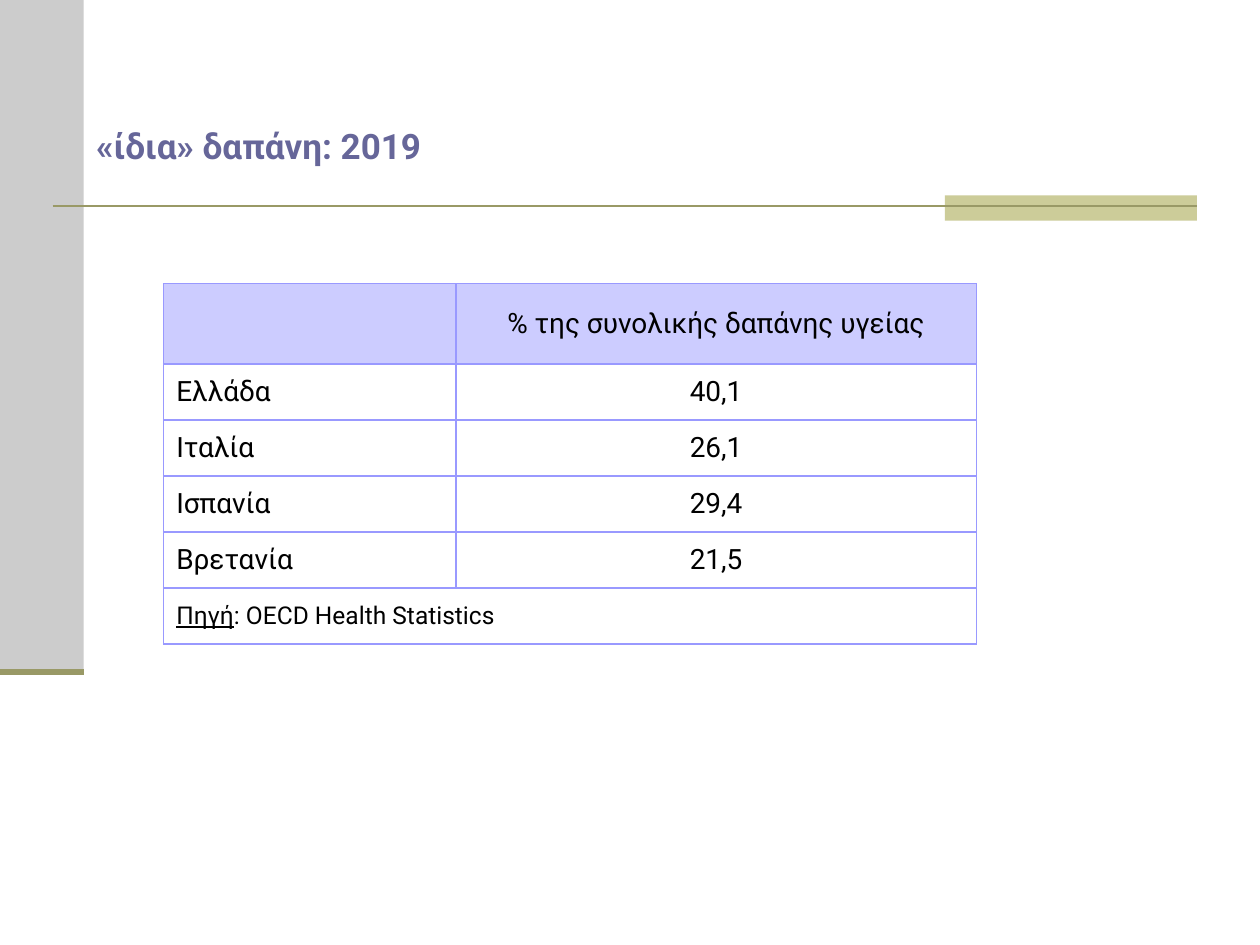
from lxml.etree import SubElement
from pptx import Presentation
from pptx.dml.color import RGBColor
from pptx.enum.shapes import MSO_CONNECTOR, MSO_SHAPE
from pptx.enum.text import MSO_ANCHOR, PP_ALIGN
from pptx.oxml.ns import qn
from pptx.util import Cm, Pt

FONT = "Roboto"
COLORS = {
    "side": "CCCCCC", "accent": "CCCC99", "rule": "999966", "title": "666699",
    "border": "9999FF", "header": "CCCCFF", "body": "FFFFFF", "text": "000000",
}
TITLE = "«ίδια» δαπάνη: 2019"
ROWS = [
    ("", "% της συνολικής δαπάνης υγείας"),
    ("Ελλάδα", "40,1"),
    ("Ιταλία", "26,1"),
    ("Ισπανία", "29,4"),
    ("Βρετανία", "21,5"),
]
SOURCE = [("Πηγή", True), (": OECD Health Statistics", False)]

COL_WIDTHS = [5.89, 10.49]
HEADER_HEIGHT, ROW_HEIGHT = 1.62, 1.13
SIDE_WIDTH, SIDE_HEIGHT = 1.69, 13.55
BARS = [
    ("side", 0, 0, SIDE_WIDTH, SIDE_HEIGHT),
    ("accent", 19.05, 3.94, 5.08, 0.51),
]
RULES = [
    (1.06, 4.15, 24.13, 1.5),
    (0, SIDE_HEIGHT, SIDE_WIDTH, 3.5),
]


def rgb(name):
    return RGBColor.from_string(COLORS[name])


def add_run(p, text, size, color="text", bold=False, underline=False):
    r = p.add_run()
    r.text = text
    r.font.name, r.font.size = FONT, Pt(size)
    r.font.bold, r.font.underline = bold, underline
    r.font.color.rgb = rgb(color)


def style_cell(cell, fill):
    """Border all four sides, then fill; the schema needs this order."""
    tcPr = cell._tc.get_or_add_tcPr()
    for side in ("a:lnL", "a:lnR", "a:lnT", "a:lnB"):
        ln = SubElement(tcPr, qn(side), w=str(Pt(1)))
        SubElement(SubElement(ln, qn("a:solidFill")), qn("a:srgbClr"), val=COLORS["border"])
    cell.fill.solid()
    cell.fill.fore_color.rgb = rgb(fill)
    cell.vertical_anchor = MSO_ANCHOR.MIDDLE


prs = Presentation()
prs.slide_width, prs.slide_height = Cm(25.4), Cm(19.05)
s = prs.slides.add_slide(prs.slide_layouts[6])

for color, *box in BARS:
    sp = s.shapes.add_shape(MSO_SHAPE.RECTANGLE, *map(Cm, box))
    sp.shadow.inherit = False
    sp.fill.solid()
    sp.fill.fore_color.rgb = rgb(color)
    sp.line.fill.background()

for left, y, right, width in RULES:
    line = s.shapes.add_connector(MSO_CONNECTOR.STRAIGHT, Cm(left), Cm(y), Cm(right), Cm(y))
    line.line.color.rgb = rgb("rule")
    line.line.width = Pt(width)
    SubElement(line._element.spPr, qn("a:effectLst"))

tf = s.shapes.add_textbox(Cm(1.69), Cm(0.91), Cm(23.71), Cm(3.39)).text_frame
tf.word_wrap = True
tf.vertical_anchor = MSO_ANCHOR.BOTTOM
tf.margin_bottom = Cm(0.94)
add_run(tf.paragraphs[0], TITLE, 20, "title", bold=True)

source_row = len(ROWS)
heights = [HEADER_HEIGHT] + [ROW_HEIGHT] * source_row
table = s.shapes.add_table(
    len(heights), len(COL_WIDTHS), Cm(3.3), Cm(5.72), Cm(sum(COL_WIDTHS)), Cm(sum(heights))
).table
for col, width in zip(table.columns, COL_WIDTHS):
    col.width = Cm(width)
for i, height in enumerate(heights):
    table.rows[i].height = Cm(height)
    for cell in table.rows[i].cells:
        style_cell(cell, "body" if i else "header")

for i, row in enumerate(ROWS):
    for j, text in enumerate(row):
        p = table.cell(i, j).text_frame.paragraphs[0]
        p.alignment = PP_ALIGN.CENTER if j else PP_ALIGN.LEFT
        if text:
            add_run(p, text, 16)

source = table.cell(source_row, 0)
source.merge(table.cell(source_row, 1))
for text, underline in SOURCE:
    add_run(source.text_frame.paragraphs[0], text, 14, underline=underline)

prs.save("out.pptx")
